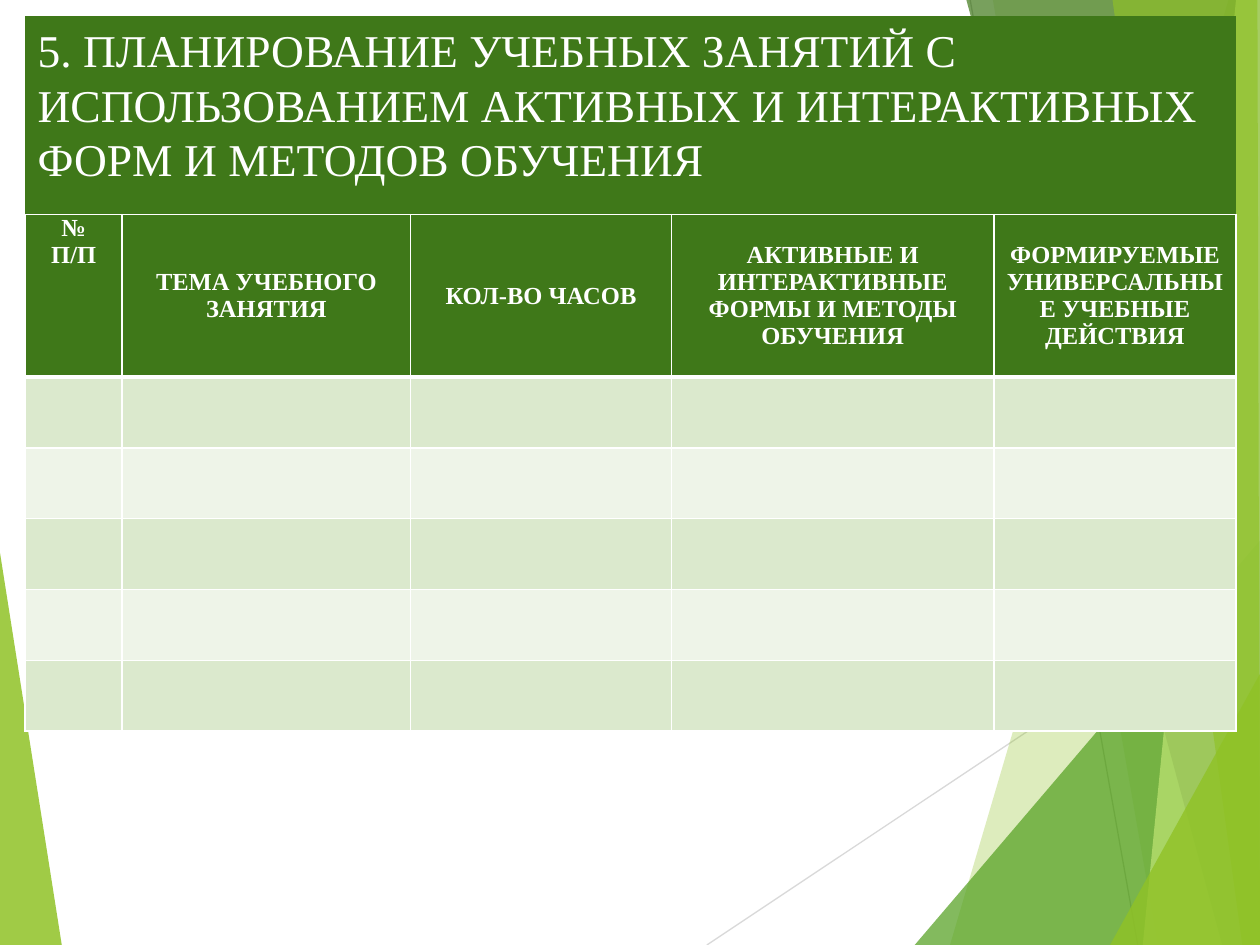
from lxml import etree
from pptx import Presentation
from pptx import util as u
from pptx.dml.color import RGBColor
from pptx.enum import shapes, text
from pptx.oxml import ns

HUES = {"lime": "90C226", "leaf": "54A021", "dark": "3F7819", "pale": "C0E474",
        "white": "FFFFFF", "odd": "DBE9CD", "even": "EEF4E8",
        "mist": "D9D9D9", "grey": "BFBFBF"}
FONT = "Times New Roman"
TITLE = ("5. ПЛАНИРОВАНИЕ УЧЕБНЫХ ЗАНЯТИЙ С ИСПОЛЬЗОВАНИЕМ АКТИВНЫХ "
         "И ИНТЕРАКТИВНЫХ ФОРМ И МЕТОДОВ ОБУЧЕНИЯ")
HEADS = ["№\nП/П", "ТЕМА УЧЕБНОГО ЗАНЯТИЯ", "КОЛ-ВО ЧАСОВ",
         "АКТИВНЫЕ И ИНТЕРАКТИВНЫЕ ФОРМЫ И МЕТОДЫ ОБУЧЕНИЯ",
         "ФОРМИРУЕМЫЕ УНИВЕРСАЛЬНЫЕ УЧЕБНЫЕ ДЕЙСТВИЯ"]
BLANKS = 5

WIDE, HIGH = 10, 7.5
LEFT, TOP, SPAN = 0.02, 0.017, 0.961
HEAD_TOP = 0.227
COLS = [0.077, 0.229, 0.207, 0.256, 0.192]
HEAD_ROW, BODY_ROW = 0.172, 0.075

LINES = [((0.561, 1), (1, 0.61), "mist"), ((0.77, 0), (0.903, 1), "grey")]
SHARDS = [
    ("lime", 85, [(0, 0.585), (0.049, 1), (0, 1)]),
    ("lime", 30, [(0.975, 0), (0.754, 1), (1, 1), (1, 0)]),
    ("lime", 20, [(0.788, 0), (0.919, 1), (1, 1), (1, 0)]),
    ("leaf", 72, [(0.726, 1), (1, 0.572), (1, 1)]),
    ("dark", 70, [(0.767, 0), (0.97, 1), (1, 1), (1, 0)]),
    ("pale", 70, [(0.981, 0), (0.907, 1), (1, 1), (1, 0)]),
    ("lime", 65, [(0.883, 0), (0.986, 1), (1, 1), (0.998, 0)]),
    ("lime", 80, [(0.881, 1), (1, 0.713), (1, 1)]),
]


def hue(name):
    return RGBColor.from_string(HUES[name])


def across(part):
    return u.Inches(WIDE * part)


def down(part):
    return u.Inches(HIGH * part)


def add(parent, tag, **attrs):
    return etree.SubElement(parent, ns.qn(tag), attrs)


def paint(parent, name):
    return add(add(parent, "a:solidFill"), "a:srgbClr", val=HUES[name])


def write(frame, words, size=14, bold=False, color="white",
          align=text.PP_ALIGN.LEFT):
    frame.word_wrap = True
    frame.text = words
    for para in frame.paragraphs:
        para.alignment = align
        for run in para.runs:
            font = run.font
            font.name, font.size, font.bold = FONT, u.Pt(size), bold
            font.color.rgb = hue(color)


def draw_line(slide, start, end, color):
    line = slide.shapes.add_connector(
        shapes.MSO_CONNECTOR.STRAIGHT, across(start[0]), down(start[1]),
        across(end[0]), down(end[1]))
    line.line.color.rgb = hue(color)
    line.line.width = u.Pt(0.75)
    add(line.element.spPr, "a:effectLst")


def draw_shard(slide, color, alpha, spots):
    spots = [(across(x), down(y)) for x, y in spots]
    pen = slide.shapes.build_freeform(*spots[0])
    pen.add_line_segments(spots[1:])
    shard = pen.convert_to_shape()
    shard.shadow.inherit = False
    shard.line.fill.background()
    shard.fill.solid()
    shard.fill.fore_color.rgb = hue(color)
    tint = shard.element.spPr.find(".//" + ns.qn("a:srgbClr"))
    add(tint, "a:alpha", val=str(alpha * 1000))


def draw_title(slide):
    box = slide.shapes.add_shape(
        shapes.MSO_SHAPE.RECTANGLE, across(LEFT), down(TOP),
        across(SPAN), down(HEAD_TOP - TOP))
    box.shadow.inherit = False
    box.fill.solid()
    box.fill.fore_color.rgb = hue("dark")
    box.line.fill.background()
    box.text_frame.vertical_anchor = text.MSO_ANCHOR.TOP
    write(box.text_frame, TITLE, size=26)


def style(cell, color, base):
    cell.fill.background()
    props = cell._tc.get_or_add_tcPr()
    for child in list(props):
        props.remove(child)
    for side, width in (("L", 1), ("R", 1), ("T", 1), ("B", base)):
        paint(add(props, "a:ln" + side, w=str(u.Pt(width))), "white")
    paint(props, color)


def draw_table(slide):
    rows = [HEAD_ROW] + [BODY_ROW] * BLANKS
    grid = slide.shapes.add_table(
        len(rows), len(COLS), across(LEFT), down(HEAD_TOP),
        across(SPAN), down(sum(rows))).table
    for col, part in zip(grid.columns, COLS):
        col.width = across(part)
    for num, part in enumerate(rows):
        grid.rows[num].height = down(part)
        for cell in grid.rows[num].cells:
            color = "odd" if num % 2 else "even"
            style(cell, color if num else "dark", 1 if num else 3)
    for num, words in enumerate(HEADS):
        cell = grid.cell(0, num)
        cell.margin_left = cell.margin_right = u.Inches(0.07)
        cell.margin_top = cell.margin_bottom = 0
        if num:
            cell.vertical_anchor = text.MSO_ANCHOR.MIDDLE
        write(cell.text_frame, words, bold=True, align=text.PP_ALIGN.CENTER)


def main():
    deck = Presentation()
    deck.slide_width, deck.slide_height = across(1), down(1)
    slide = deck.slides.add_slide(deck.slide_layouts[6])
    draw_shard(slide, *SHARDS[0])
    for line in LINES:
        draw_line(slide, *line)
    for shard in SHARDS[1:]:
        draw_shard(slide, *shard)
    draw_title(slide)
    draw_table(slide)
    deck.save("out.pptx")


if __name__ == "__main__":
    main()
